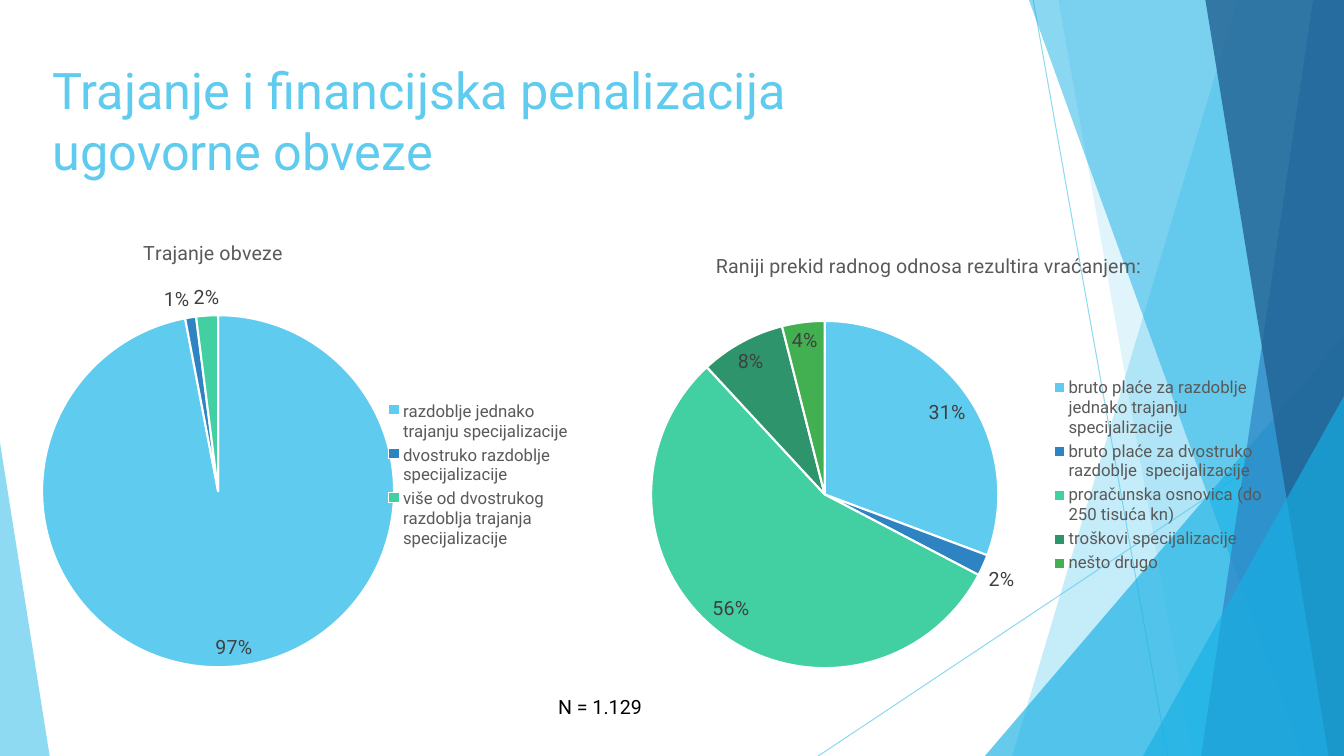
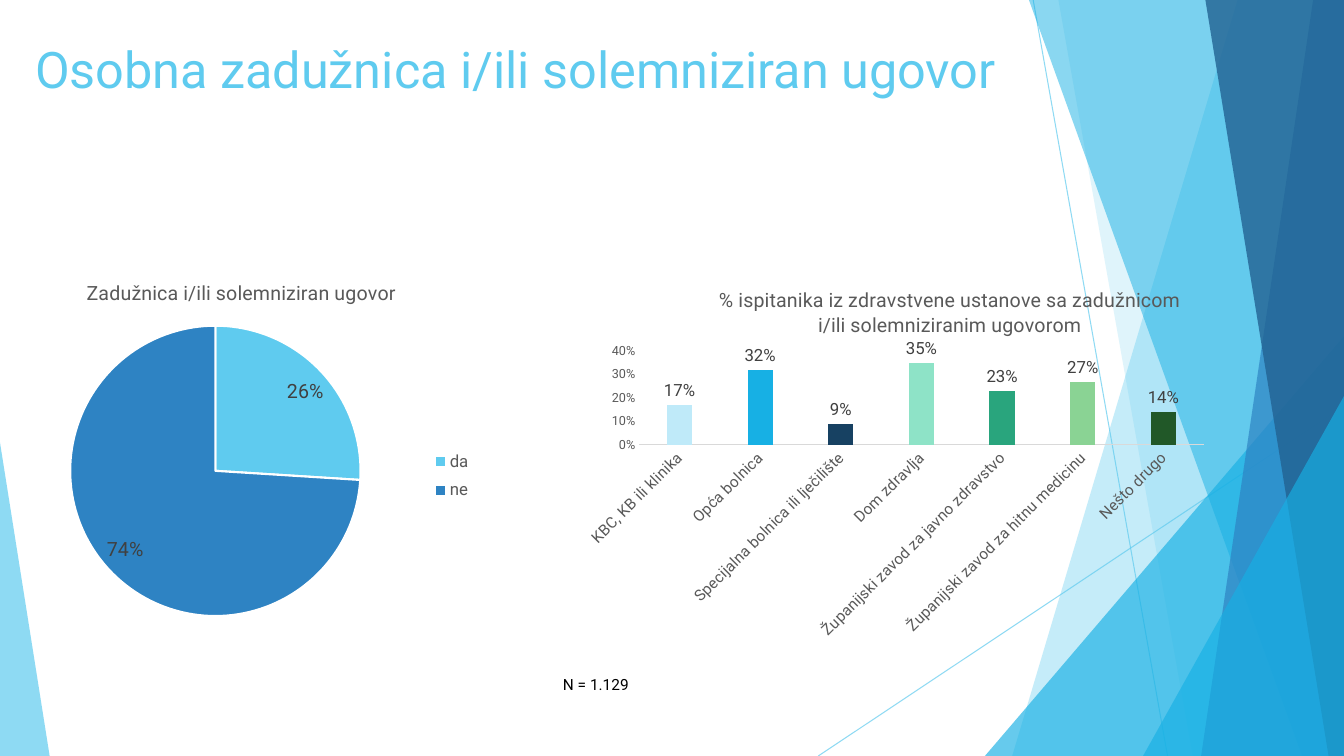
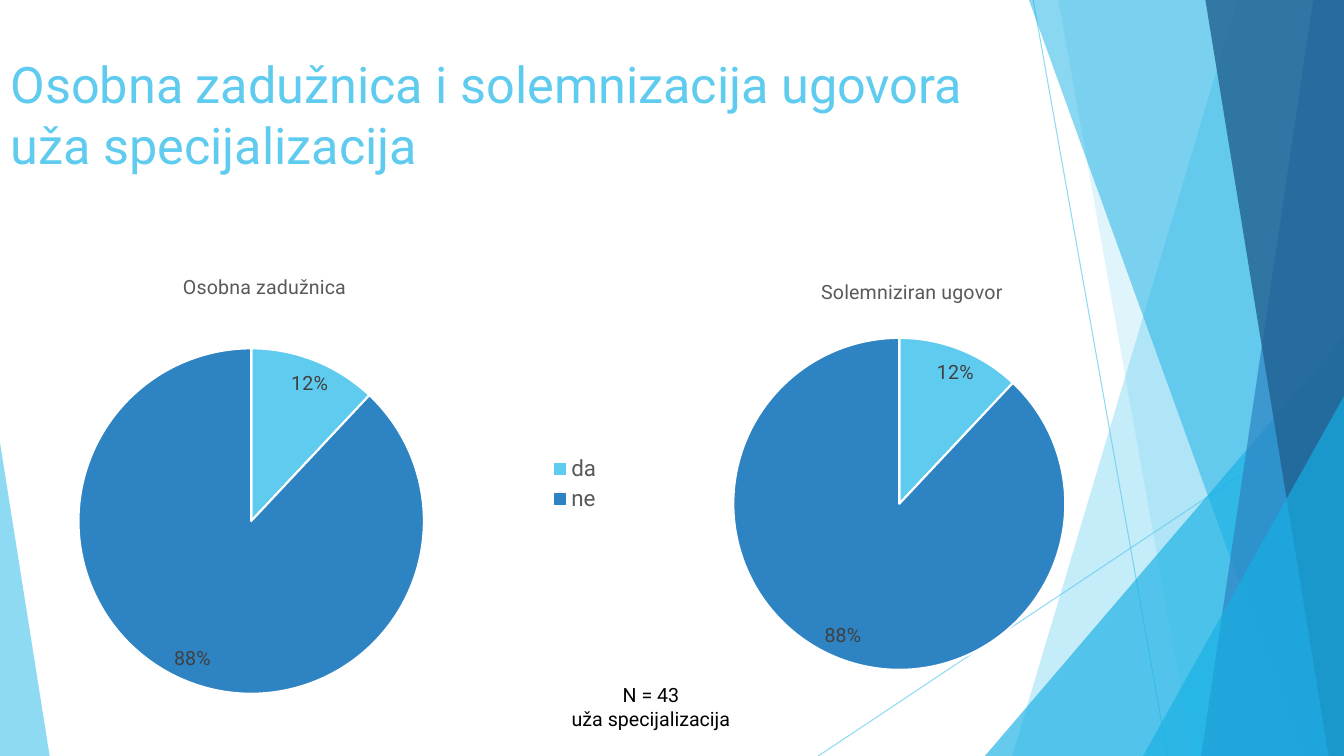
import lxml.etree
import pptx
import pptx.chart.data
import pptx.dml.color
import pptx.enum.chart
import pptx.enum.shapes
import pptx.enum.text
import pptx.oxml.ns
import pptx.util

Pt = pptx.util.Pt
RGB = pptx.dml.color.RGBColor.from_string
qn = pptx.oxml.ns.qn
PIE = pptx.enum.chart.XL_CHART_TYPE.PIE
COLUMN = pptx.enum.chart.XL_CHART_TYPE.COLUMN_CLUSTERED
LABEL = pptx.enum.chart.XL_LABEL_POSITION
ALIGN = pptx.enum.text.PP_ALIGN
FONT = "Roboto"
WIDTH, HEIGHT = 960, 540
COLOURS = {
    "sky": "5FCBEF", "azure": "17B0E4", "blue": "2E83C3", "navy": "226292",
    "mint": "42D0A2", "teal": "2E946B", "green": "42B051",
    "pale sky": "BFEAF9", "deep navy": "174162", "pale mint": "8EE3C7",
    "sea": "29A57D", "pale green": "8AD394", "forest": "215828",
    "text": "595959", "label": "404040", "axis": "D9D9D9",
    "black": "000000", "white": "FFFFFF",
}
PIE_COLOURS = ["sky", "blue", "mint", "teal", "green"]


def fade(shape, percent):
    colour = next(shape.element.iter(qn("a:srgbClr")))
    lxml.etree.SubElement(colour, qn("a:alpha")).set("val", str(percent * 1000))


def place(element, box, inner=False):
    layout = element.find(qn("c:layout"))
    if layout is None:
        layout = lxml.etree.Element(qn("c:layout"))
        element.insert(0, layout)
    manual = lxml.etree.SubElement(layout, qn("c:manualLayout"))
    settings = [("layoutTarget", "inner")] if inner else []
    settings += [("xMode", "edge"), ("yMode", "edge"), *zip("xywh", box)]
    for name, value in settings:
        lxml.etree.SubElement(manual, qn("c:" + name)).set("val", str(value))


presentation = pptx.Presentation()
presentation.slide_width = Pt(WIDTH)
presentation.slide_height = Pt(HEIGHT)
blank_layout = presentation.slide_layouts[6]
for placeholder in list(blank_layout.placeholders):
    placeholder.element.getparent().remove(placeholder.element)

slides = [presentation.slides.add_slide(blank_layout) for _ in range(3)]
backdrop = slides[0].shapes.add_group_shape()

for start_x, start_y, end_x, end_y in [(738, 0, 834, HEIGHT), (WIDTH, 290, 584.5, HEIGHT)]:
    line = backdrop.shapes.add_connector(
        pptx.enum.shapes.MSO_CONNECTOR.STRAIGHT, Pt(start_x), Pt(start_y), Pt(end_x), Pt(end_y))
    line.line.color.rgb = RGB(COLOURS["sky"])
    line.line.width = Pt(0.75)
    fade(line, 70)
    lxml.etree.SubElement(line.element.spPr, qn("a:effectLst"))

facets = [
    ("panel", (884, 723), "sky", 36),
    ("panel", (756, 852), "sky", 20),
    ("triangle", (703.5, 240, 256.5, 1), "azure", 66),
    ("panel", (735, 929.5), "azure", 50),
    ("panel", (938, 858), "blue", 70),
    ("panel", (861, 949), "navy", 80),
    ("triangle", (816.5, 283, 143.5, 1), "azure", 66),
    ("triangle", (0, 316, 35.5, 0), "sky", 70),
]
for kind, geometry, colour, opacity in facets:
    if kind == "panel":
        top_x, bottom_x = geometry
        builder = backdrop.shapes.build_freeform(top_x, 0, scale=Pt(1))
        builder.add_line_segments([(WIDTH, 0), (WIDTH, HEIGHT), (bottom_x, HEIGHT)], close=True)
        shape = builder.convert_to_shape()
    else:
        left, top, width, apex = geometry
        shape = backdrop.shapes.add_shape(
            pptx.enum.shapes.MSO_SHAPE.ISOSCELES_TRIANGLE,
            Pt(left), Pt(top), Pt(width), Pt(HEIGHT - top))
        shape.adjustments[0] = apex
    shape.shadow.inherit = False
    shape.fill.solid()
    shape.fill.fore_color.rgb = RGB(COLOURS[colour])
    shape.line.fill.background()
    fade(shape, opacity)
blank_layout.shapes.element.append(backdrop.element)

texts = [
    [("Trajanje i financijska penalizacija \vugovorne obveze", (30.5, 39, 800, 104), 36, "sky", ALIGN.LEFT),
     ("N = 1.129", (391.5, 493, 135, 24), 14, "black", ALIGN.LEFT)],
    [("Osobna zadužnica i/ili solemniziran ugovor", (18, 24, 783, 104), 36, "sky", ALIGN.LEFT),
     ("N = 1.129", (395, 479, 135, 21), 11, "black", ALIGN.LEFT)],
    [("Osobna zadužnica i solemnizacija ugovora \vuža specijalizacija", (0.5, 34.5, 783, 104), 36, "sky", ALIGN.LEFT),
     ("N = 43\nuža specijalizacija", (370, 484.5, 190, 41), 14, "black", ALIGN.CENTER)],
]
for slide, slide_texts in zip(slides, texts):
    for text, box, size, colour, alignment in slide_texts:
        text_frame = slide.shapes.add_textbox(*map(Pt, box)).text_frame
        text_frame.word_wrap = True
        text_frame.text = text
        for paragraph in text_frame.paragraphs:
            paragraph.alignment = alignment
            for run in paragraph.runs:
                run.font.name = FONT
                run.font.size = Pt(size)
                run.font.color.rgb = RGB(COLOURS[colour])

charts = [
    dict(slide=0, type=PIE, box=(0, 149, 415.5, 381), title="Trajanje obveze",
         title_at=(0.24, 0.05), plot=(0.07, 0.2, 0.61, 0.66), legend=12, outside=[1, 2],
         data={"razdoblje jednako trajanju specijalizacije": 97,
               "dvostruko razdoblje  specijalizacije": 1,
               "više od dvostrukog razdoblja trajanja specijalizacije": 2}),
    dict(slide=0, type=PIE, box=(415.5, 167, 496, 345),
         title="Raniji prekid radnog odnosa rezultira vraćanjem:",
         plot=(0.1, 0.18, 0.5, 0.72), legend=12, label_format='0"%"',
         data={"bruto plaće za razdoblje jednako trajanju specijalizacije": 31,
               "bruto plaće za dvostruko razdoblje  specijalizacije": 2,
               "proračunska osnovica (do 250 tisuća kn)": 56,
               "troškovi specijalizacije": 8,
               "nešto drugo": 4}),
    dict(slide=1, type=PIE, box=(-36.5, 188, 418, 262), title="Zadužnica i/ili solemniziran ugovor",
         legend=12, legend_at=(0.81, 0.49, 0.1, 0.18),
         data={"da": 26, "ne": 74}),
    dict(slide=1, type=COLUMN, box=(410.5, 195, 458.5, 262),
         title="% ispitanika iz zdravstvene ustanove sa zadužnicom\ni/ili solemniziranim ugovorom",
         title_at=(0.22, 0.03), label_format="0%", label_size=12,
         colours=["pale sky", "azure", "deep navy", "pale mint", "sea", "pale green", "forest"],
         data={"KBC, KB ili klinika": 0.17, "Opća bolnica": 0.32,
               "Specijalna bolnica ili lječilište": 0.09, "Dom zdravlja": 0.35,
               "Županijski zavod za javno zdravstvo": 0.23,
               "Županijski zavod za hitnu medicinu": 0.27, "Nešto drugo": 0.14}),
    dict(slide=2, type=PIE, box=(-31, 186, 468, 319.5), title="Osobna zadužnica",
         title_at=(0.34, 0.02), legend=16, data={"da": 12, "ne": 88}),
    dict(slide=2, type=PIE, box=(423.5, 186, 456, 302.5), title="Solemniziran ugovor",
         plot=(0.22, 0.18, 0.52, 0.79), data={"1": 12, "2": 88}),
]
for entry in charts:
    is_pie = entry["type"] == PIE
    chart_data = pptx.chart.data.CategoryChartData(number_format="General" if is_pie else "0%")
    chart_data.categories = list(entry["data"])
    chart_data.add_series("Series 1", list(entry["data"].values()))
    chart = slides[entry["slide"]].shapes.add_chart(
        entry["type"], *map(Pt, entry["box"]), chart_data).chart
    chart.font.name = FONT
    chart.font.size = Pt(10)
    chart.font.color.rgb = RGB(COLOURS["black"])

    chart.has_title = True
    chart.chart_title.include_in_layout = False
    chart.chart_title.text_frame.text = entry["title"]
    for paragraph in chart.chart_title.text_frame.paragraphs:
        title_font = paragraph.runs[0].font
        title_font.name = FONT
        title_font.size = Pt(14)
        title_font.bold = False
        title_font.color.rgb = RGB(COLOURS["text"])
    if "title_at" in entry:
        place(next(chart.element.iter(qn("c:title"))), entry["title_at"])
    if "plot" in entry:
        place(next(chart.element.iter(qn("c:plotArea"))), entry["plot"], inner=True)

    chart.has_legend = "legend" in entry
    if chart.has_legend:
        chart.legend.position = pptx.enum.chart.XL_LEGEND_POSITION.RIGHT
        chart.legend.include_in_layout = False
        chart.legend.font.name = FONT
        chart.legend.font.size = Pt(entry["legend"])
        chart.legend.font.color.rgb = RGB(COLOURS["text"])
        if "legend_at" in entry:
            place(next(chart.element.iter(qn("c:legend"))), entry["legend_at"])

    plot = chart.plots[0]
    plot.vary_by_categories = is_pie
    series = plot.series[0]
    series.format.fill.solid()
    series.format.fill.fore_color.rgb = RGB(COLOURS["sky"])
    for index, colour in zip(range(len(entry["data"])), entry.get("colours", PIE_COLOURS)):
        point_format = series.points[index].format
        point_format.fill.solid()
        point_format.fill.fore_color.rgb = RGB(COLOURS[colour])
        if is_pie:
            point_format.line.color.rgb = RGB(COLOURS["white"])
            point_format.line.width = Pt(1.5)

    labels = series.data_labels
    labels.show_value = "label_format" in entry
    labels.show_percentage = not labels.show_value
    labels.number_format = entry.get("label_format", "0%")
    labels.number_format_is_linked = False
    labels.position = LABEL.BEST_FIT if is_pie else LABEL.OUTSIDE_END
    outside_labels = [series.points[index].data_label for index in entry.get("outside", [])]
    for label in outside_labels:
        label.position = LABEL.OUTSIDE_END
    for label in [labels, *outside_labels]:
        label.font.name = FONT
        label.font.size = Pt(entry.get("label_size", 14))
        label.font.color.rgb = RGB(COLOURS["label"])
    for point_label in chart.element.iter(qn("c:dLbl")):
        point_label.find(qn("c:showVal")).set("val", "0")
        point_label.find(qn("c:showPercent")).set("val", "1")

    if not is_pie:
        plot.gap_width = 219
        plot.overlap = -27
        for axis, size in [(chart.category_axis, 11), (chart.value_axis, 9)]:
            axis.has_major_gridlines = False
            axis.major_tick_mark = pptx.enum.chart.XL_TICK_MARK.NONE
            axis.tick_labels.font.name = FONT
            axis.tick_labels.font.size = Pt(size)
            axis.tick_labels.font.color.rgb = RGB(COLOURS["text"])
        chart.category_axis.format.line.color.rgb = RGB(COLOURS["axis"])
        chart.category_axis.format.line.width = Pt(0.75)
        next(next(chart.element.iter(qn("c:catAx"))).iter(qn("a:bodyPr"))).set("rot", "-2700000")
        chart.value_axis.format.line.fill.background()
        chart.value_axis.minimum_scale = 0
        chart.value_axis.maximum_scale = 0.4
        chart.value_axis.major_unit = 0.1
        chart.value_axis.tick_labels.number_format = "0%"
        chart.value_axis.tick_labels.number_format_is_linked = False

presentation.save("out.pptx")
